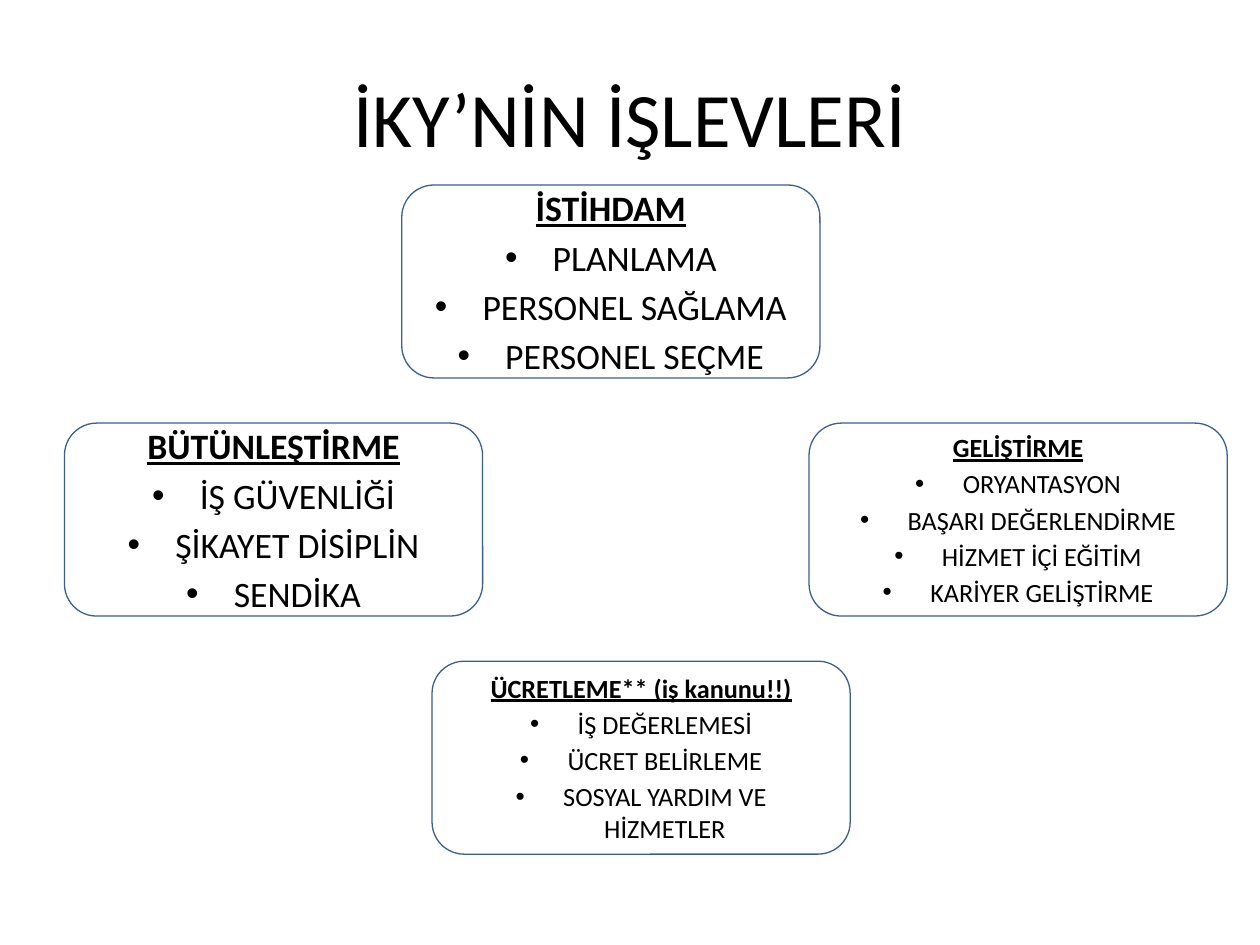
from dataclasses import dataclass

import pptx
import pptx.dml.color
import pptx.enum.shapes
import pptx.enum.text
import pptx.oxml
import pptx.slide
import pptx.text.text
import pptx.util
from pptx.util import Cm


@dataclass(frozen=True)
class Theme:
    font: str = "Calibri"
    ink: str = "000000"
    outline: str = "3A5F8C"
    title_size: float = 44
    large: float = 20.4
    small: float = 15
    outline_width: float = 0.75
    space_before: float = 0.18  # share of the type size


@dataclass(frozen=True)
class Function:
    heading: str
    tasks: tuple[str, ...]
    left: float
    row: int
    size: float


THEME = Theme()
BOX_WIDTH, BOX_HEIGHT = 8.43, 3.89
FIRST_TOP, ROW_STEP = 3.73, 4.8
BULLET_INDENT = 0.96

FUNCTIONS = (
    Function("İSTİHDAM", ("PLANLAMA", "PERSONEL SAĞLAMA", "PERSONEL SEÇME"),
             8.1, 0, THEME.large),
    Function("GELİŞTİRME",
             ("ORYANTASYON", "BAŞARI DEĞERLENDİRME", "HİZMET İÇİ EĞİTİM",
              "KARİYER GELİŞTİRME"),
             16.31, 1, THEME.small),
    Function("ÜCRETLEME** (iş kanunu!!)",
             ("İŞ DEĞERLEMESİ", "ÜCRET BELİRLEME", "SOSYAL YARDIM VE HİZMETLER"),
             8.71, 2, THEME.small),
    Function("BÜTÜNLEŞTİRME", ("İŞ GÜVENLİĞİ", "ŞİKAYET DİSİPLİN", "SENDİKA"),
             1.3, 1, THEME.large),
)


def write(paragraph: pptx.text.text._Paragraph, text: str, size: float) -> None:
    paragraph.text = text
    paragraph.alignment = pptx.enum.text.PP_ALIGN.CENTER
    paragraph.font.name = THEME.font
    paragraph.font.size = pptx.util.Pt(size)
    paragraph.font.color.rgb = pptx.dml.color.RGBColor.from_string(THEME.ink)


def add_bullet(paragraph: pptx.text.text._Paragraph) -> None:
    properties = paragraph._p.get_or_add_pPr()
    properties.set("marL", str(Cm(BULLET_INDENT)))
    properties.set("indent", str(-Cm(BULLET_INDENT)))
    for tag, attribute, value in (("buFont", "typeface", "Arial"),
                                  ("buChar", "char", "•")):
        bullet = pptx.oxml.parse_xml(
            f'<a:{tag} xmlns:a="http://schemas.openxmlformats.org/drawingml/2006/main"'
            f' {attribute}="{value}"/>')
        properties.append(bullet)


def draw_title(slide: pptx.slide.Slide, text: str) -> None:
    title = slide.shapes.add_textbox(Cm(1.27), Cm(0.76), Cm(22.86), Cm(3.18))
    title.text_frame.word_wrap = True
    title.text_frame.vertical_anchor = pptx.enum.text.MSO_ANCHOR.MIDDLE
    write(title.text_frame.paragraphs[0], text, THEME.title_size)


def draw_function(slide: pptx.slide.Slide, function: Function) -> None:
    box = slide.shapes.add_shape(
        pptx.enum.shapes.MSO_SHAPE.ROUNDED_RECTANGLE,
        Cm(function.left), Cm(FIRST_TOP + function.row * ROW_STEP),
        Cm(BOX_WIDTH), Cm(BOX_HEIGHT))
    box.shadow.inherit = False
    box.fill.background()
    box.line.color.rgb = pptx.dml.color.RGBColor.from_string(THEME.outline)
    box.line.width = pptx.util.Pt(THEME.outline_width)

    frame = box.text_frame
    frame.word_wrap = True
    frame.vertical_anchor = pptx.enum.text.MSO_ANCHOR.MIDDLE
    for index, text in enumerate((function.heading, *function.tasks)):
        paragraph = frame.add_paragraph() if index else frame.paragraphs[0]
        write(paragraph, text, function.size)
        paragraph.space_before = pptx.util.Pt(function.size * THEME.space_before)
        if index:
            add_bullet(paragraph)
        else:
            paragraph.font.bold = True
            paragraph.font.underline = True


def main() -> None:
    presentation = pptx.Presentation()
    presentation.slide_width, presentation.slide_height = Cm(25.4), Cm(19.05)
    slide = presentation.slides.add_slide(presentation.slide_layouts[6])

    # Title
    draw_title(slide, "İKY’NİN İŞLEVLERİ")

    # Four functions arranged in a diamond
    for function in FUNCTIONS:
        draw_function(slide, function)

    presentation.save("out.pptx")


if __name__ == "__main__":
    main()
